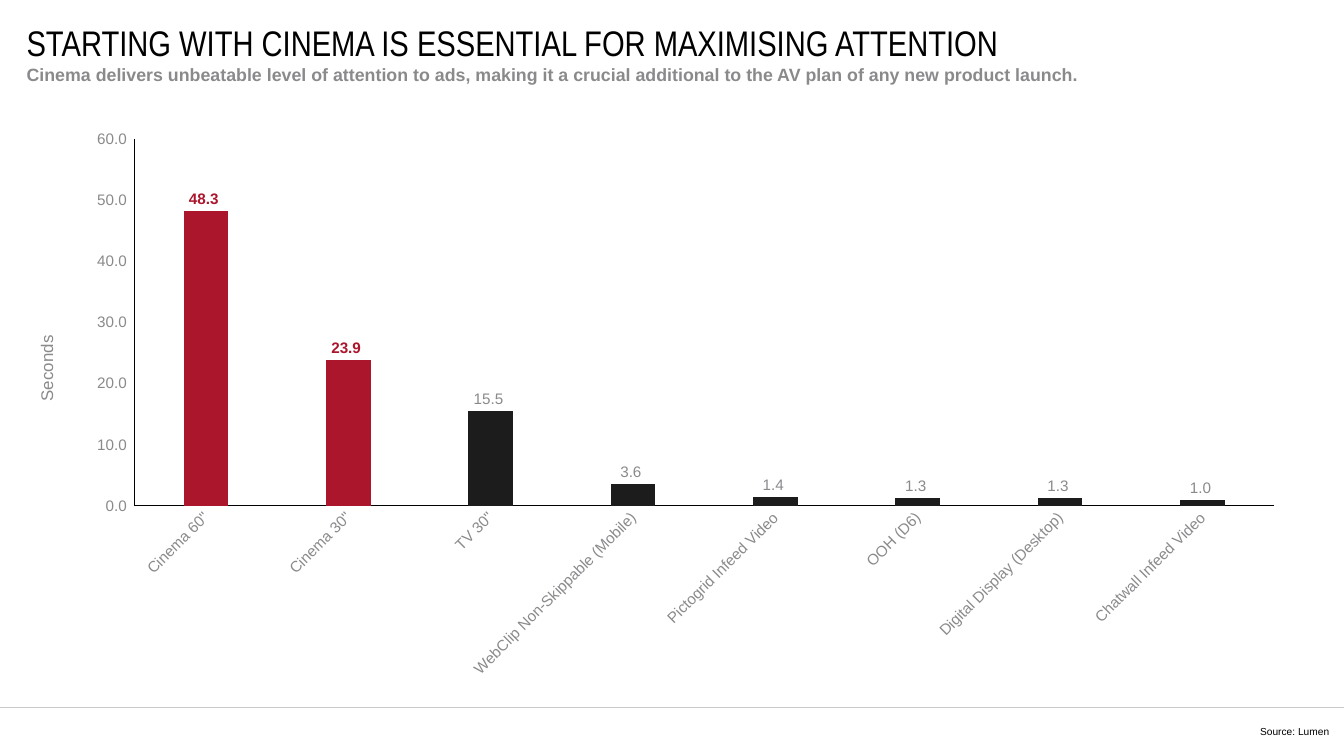
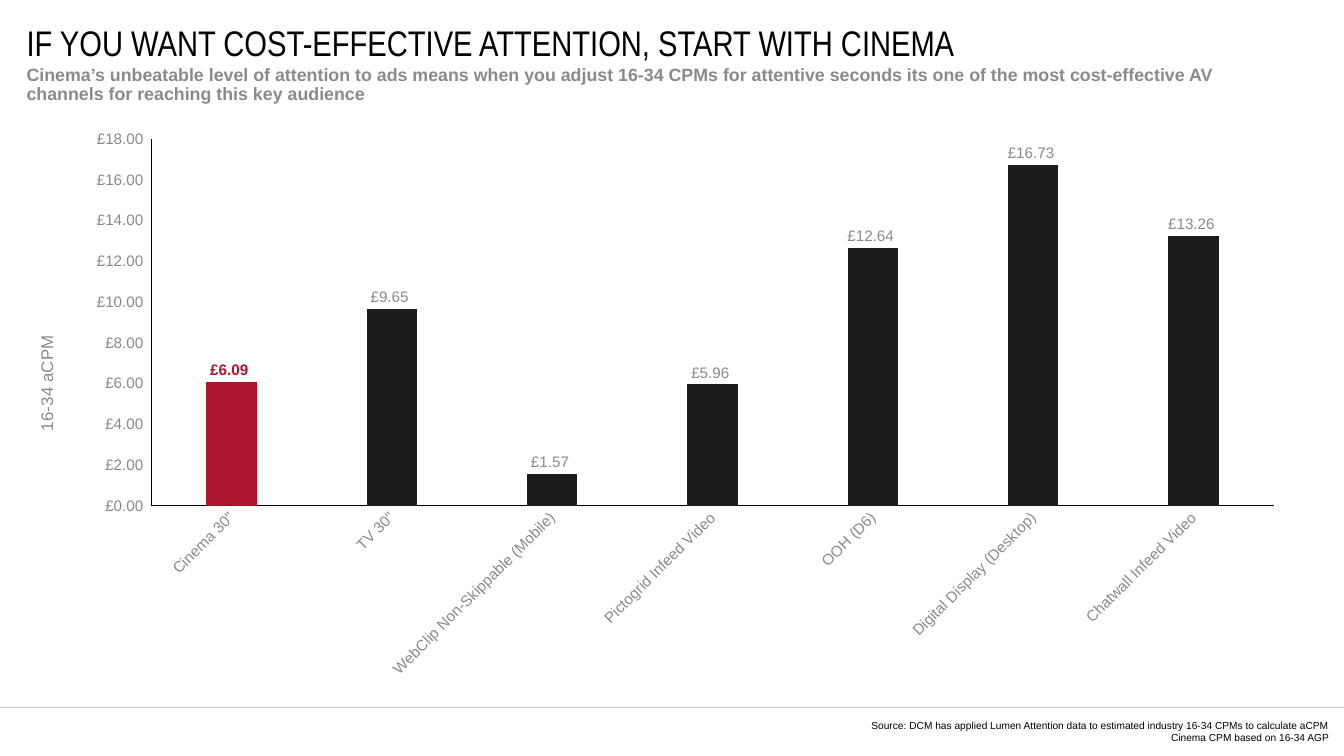
from lxml import etree
from pptx import Presentation
from pptx.chart.data import CategoryChartData
from pptx.dml.color import RGBColor
from pptx.enum.chart import XL_CHART_TYPE, XL_LABEL_POSITION, XL_TICK_MARK
from pptx.enum.shapes import MSO_CONNECTOR
from pptx.enum.text import MSO_ANCHOR, MSO_AUTO_SIZE, PP_ALIGN
from pptx.oxml import parse_xml
from pptx.oxml.ns import nsdecls, qn
from pptx.util import Inches, Pt

COLUMN = XL_CHART_TYPE.COLUMN_CLUSTERED
OUTSIDE_END = XL_LABEL_POSITION.OUTSIDE_END
NO_TICK = XL_TICK_MARK.NONE
TOP, MIDDLE = MSO_ANCHOR.TOP, MSO_ANCHOR.MIDDLE
LEFT, RIGHT = PP_ALIGN.LEFT, PP_ALIGN.RIGHT
STRAIGHT = MSO_CONNECTOR.STRAIGHT
NO_AUTOFIT = MSO_AUTO_SIZE.NONE

SLIDE_W, SLIDE_H = 14.7, 8.27
MARGIN = 0.29
BLACK, BAR, RED, GREY, RULE = "000000", "1C1C1C", "AC162C", "8A8A8D", "CAC8C8"
BODY_FONT, TITLE_FONT = "Arial", "Arial Narrow"

SECONDS_FORMAT = r"#,##0.0_ ;[Red]\-#,##0.0\ "
POUNDS_FORMAT = r'"£"#,##0.00_);[Red]\("£"#,##0.00\)'

CHANNELS = [
    'TV 30"', "WebClip Non-Skippable (Mobile)", "Pictogrid Infeed Video",
    "OOH (D6)", "Digital Display (Desktop)", "Chatwall Infeed Video",
]


def rgb(value):
    return RGBColor.from_string(value)


def style_font(font, size, color=GREY, name=BODY_FONT, bold=False):
    font.size = Pt(size)
    font.name = name
    font.bold = bold
    font.color.rgb = rgb(color)


def write_text(sp, lines, size, color=BLACK, name=BODY_FONT, bold=False,
               align=LEFT, anchor=TOP, spacing=None):
    tf = sp.text_frame
    tf.auto_size = NO_AUTOFIT
    tf.word_wrap = True
    tf.vertical_anchor = anchor
    tf.margin_left = tf.margin_right = tf.margin_top = tf.margin_bottom = 0
    for i, line in enumerate(lines):
        p = tf.paragraphs[0] if i == 0 else tf.add_paragraph()
        p.alignment = align
        p.line_spacing = spacing
        r = p.add_run()
        r.text = line
        style_font(r.font, size, color, name, bold)


def add_text(slide, left, top, width, height, lines, size, **fmt):
    sp = slide.shapes.add_textbox(Inches(left), Inches(top),
                                  Inches(width), Inches(height))
    write_text(sp, lines, size, **fmt)


def add_rule(slide, y):
    line = slide.shapes.add_connector(STRAIGHT, 0, Inches(y),
                                      Inches(SLIDE_W), Inches(y))
    line.line.color.rgb = rgb(RULE)
    line.line.width = Pt(0.5)
    etree.SubElement(line.element.spPr, qn("a:effectLst"))


def add_slide(prs, title, subtitle, source):
    """Add a slide with the shared heading, footer rule and source note."""
    slide = prs.slides.add_slide(prs.slide_layouts[5])
    add_rule(slide, 7.74)
    sp = slide.shapes.title
    sp.left, sp.top = Inches(MARGIN), Inches(0.3)
    sp.width, sp.height = Inches(13.58), Inches(0.32)
    write_text(sp, [title], 28, name=TITLE_FONT, anchor=MIDDLE)
    add_text(slide, MARGIN, 0.72, 13.59, 0.48, [subtitle], 14,
             color=GREY, bold=True, spacing=Pt(15))
    add_text(slide, 8.84, 7.87, 5.7, 0.27, source, 8,
             align=RIGHT, anchor=MIDDLE)
    return slide


def layout_xml(x, y, w=None, h=None):
    """Manual chart layout, in fractions of the chart area."""
    target = '<c:layoutTarget val="inner"/>' if w else ""
    size = f'<c:w val="{w}"/><c:h val="{h}"/>' if w else ""
    return parse_xml(
        f'<c:layout {nsdecls("c")}><c:manualLayout>{target}'
        '<c:xMode val="edge"/><c:yMode val="edge"/>'
        f'<c:x val="{x}"/><c:y val="{y}"/>{size}'
        '</c:manualLayout></c:layout>')


def set_layout(element, layout, before):
    """Replace the layout of a chart part, ahead of the named child."""
    for old in element.findall(qn("c:layout")):
        element.remove(old)
    following = element.find(qn(before))
    if following is None:
        element.append(layout)
    else:
        following.addprevious(layout)


def style_axis(axis):
    axis.has_major_gridlines = False
    axis.major_tick_mark = axis.minor_tick_mark = NO_TICK
    axis.format.line.color.rgb = rgb(BLACK)
    axis.format.line.width = Pt(0.75)
    style_font(axis.tick_labels.font, 12)


def style_value_axis(axis, title, top, step, number_format):
    style_axis(axis)
    axis.minimum_scale, axis.maximum_scale = 0, top
    axis.major_unit = step
    axis.tick_labels.number_format = number_format
    axis.tick_labels.number_format_is_linked = False
    axis.has_title = True
    p = axis.axis_title.text_frame.paragraphs[0]
    r = p.add_run()
    r.text = title
    style_font(r.font, 13.3)
    body = axis.axis_title.text_frame._txBody.find(qn("a:bodyPr"))
    body.set("rot", "-5400000")
    body.set("vert", "horz")
    set_layout(axis.axis_title._element, layout_xml(0.005, 0.371), "c:overlay")


def add_column_chart(slide, cats, vals, highlighted, axis_title, top, step,
                     number_format, plot_left):
    """Column chart whose first `highlighted` bars are red."""
    data = CategoryChartData(number_format=number_format)
    data.categories = cats
    data.add_series("Series 1", vals)
    chart = slide.shapes.add_chart(COLUMN, Inches(MARGIN), Inches(1.31),
                                   Inches(13.92), Inches(6.26), data).chart
    chart.has_title = chart.has_legend = False
    style_font(chart.font, 10)

    style_axis(chart.category_axis)
    labels = chart.category_axis._element.find(qn("c:txPr"))
    labels.find(qn("a:bodyPr")).set("rot", "-2700000")
    style_value_axis(chart.value_axis, axis_title, top, step, number_format)

    plot = chart.plots[0]
    plot.gap_width, plot.overlap = 219, -27
    plot.vary_by_categories = False
    series = plot.series[0]
    series.format.fill.solid()
    series.format.fill.fore_color.rgb = rgb(BAR)
    labels = series.data_labels
    labels.show_value = True
    labels.position = OUTSIDE_END
    labels.number_format = number_format
    labels.number_format_is_linked = False
    style_font(labels.font, 12)
    for i in range(highlighted):
        point = series.points[i]
        point.format.fill.solid()
        point.format.fill.fore_color.rgb = rgb(RED)
        style_font(point.data_label.font, 12, RED, bold=True)
        point.data_label.position = OUTSIDE_END

    plot_area = chart.element.chart.plotArea
    plot_layout = layout_xml(plot_left, 0.034, round(0.98 - plot_left, 3), 0.641)
    set_layout(plot_area, plot_layout, "c:barChart")


def main():
    prs = Presentation()
    prs.slide_width, prs.slide_height = Inches(SLIDE_W), Inches(SLIDE_H)

    slide = add_slide(
        prs, "STARTING WITH CINEMA IS ESSENTIAL FOR MAXIMISING ATTENTION",
        "Cinema delivers unbeatable level of attention to ads, making it a "
        "crucial additional to the AV plan of any new product launch.",
        ["Source: Lumen"])
    add_column_chart(
        slide, ['Cinema 60"', 'Cinema 30"'] + CHANNELS,
        [48.3, 23.9, 15.5, 3.6, 1.4, 1.3, 1.3, 1.0], 2,
        "Seconds", 60, 10, SECONDS_FORMAT, plot_left=0.085)

    slide = add_slide(
        prs, "IF YOU WANT COST-EFFECTIVE ATTENTION, START WITH CINEMA",
        "Cinema’s unbeatable level of attention to ads means when you adjust "
        "16-34 CPMs for attentive seconds its one of the most cost-effective "
        "AV channels for reaching this key audience",
        ["Source: DCM has applied Lumen Attention data to estimated industry "
         "16-34 CPMs to calculate aCPM",
         "Cinema CPM based on 16-34 AGP"])
    add_column_chart(
        slide, ['Cinema 30"'] + CHANNELS,
        [6.09, 9.65, 1.57, 5.96, 12.64, 16.73, 13.26], 1,
        "16-34 aCPM", 18, 2, POUNDS_FORMAT, plot_left=0.098)

    prs.save("out.pptx")


if __name__ == "__main__":
    main()
